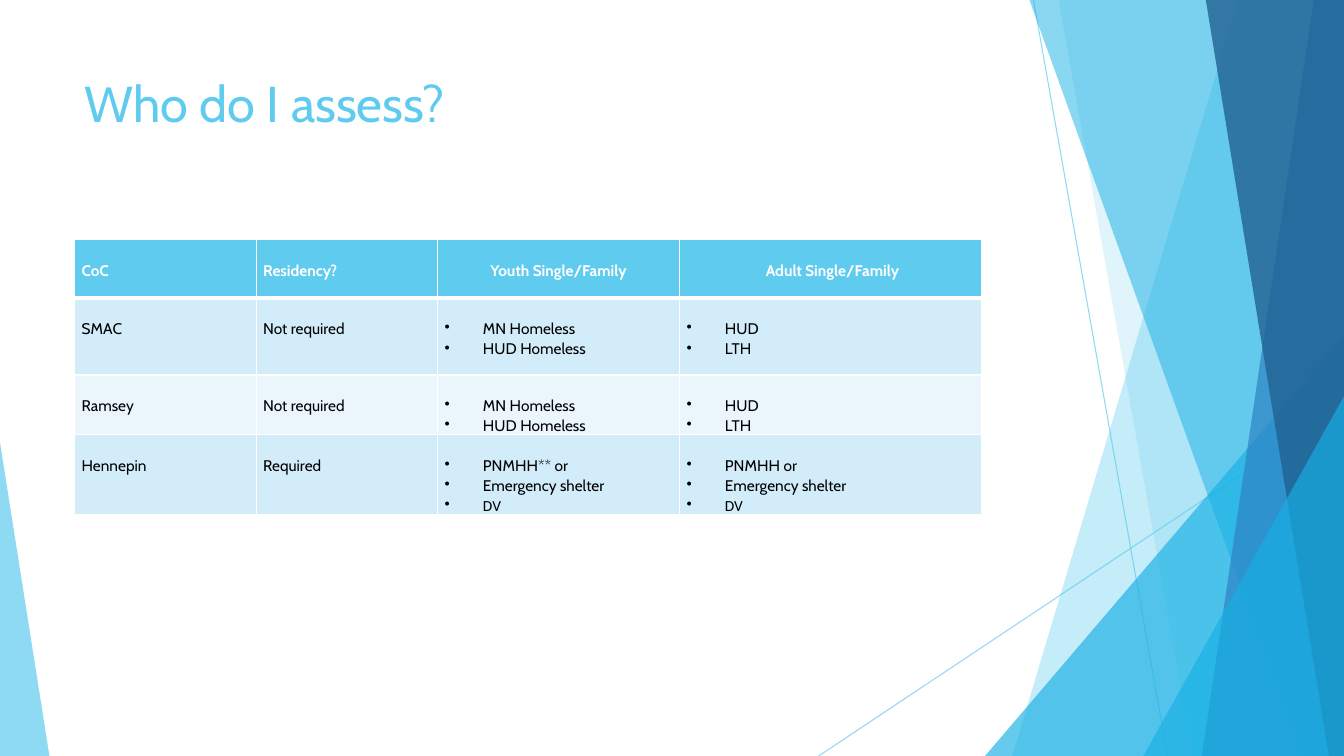
"""Build the "Who do I assess?" slide with its faceted backdrop and table."""
from dataclasses import dataclass

from lxml import etree
from pptx import Presentation
from pptx.dml.color import RGBColor
from pptx.enum.shapes import MSO_CONNECTOR, MSO_SHAPE
from pptx.enum.text import MSO_ANCHOR, PP_ALIGN
from pptx.oxml.ns import qn
from pptx.util import Inches, Pt

STRAIGHT = MSO_CONNECTOR.STRAIGHT
TRIANGLE = MSO_SHAPE.ISOSCELES_TRIANGLE
TOP, LEFT, CENTER = MSO_ANCHOR.TOP, PP_ALIGN.LEFT, PP_ALIGN.CENTER
WIDTH, HEIGHT = 13.33, 7.5


@dataclass(frozen=True)
class Theme:
    """Colours, fonts and type sizes of the slide."""
    sky: str = "5FCBEF"
    cyan: str = "17B0E4"
    blue: str = "2E83C3"
    navy: str = "226292"
    white: str = "FFFFFF"
    black: str = "000000"
    band_dark: str = "D2ECF9"
    band_light: str = "EAF6FC"
    font: str = "Cabin"
    alternate_font: str = "Calibri"
    title_size: float = 36
    table_size: float = 11


THEME = Theme()


@dataclass(frozen=True)
class Ray:
    """A thin line across the backdrop."""
    start: tuple[float, float]
    end: tuple[float, float]


@dataclass(frozen=True)
class Panel:
    """A full-height facet reaching the right edge of the slide."""
    top_left: float
    bottom_left: float
    color: str
    opacity: int


@dataclass(frozen=True)
class Corner:
    """A right triangle standing on the bottom edge of the slide."""
    left: float
    width: float
    height: float
    apex: float
    color: str
    opacity: int


@dataclass(frozen=True)
class Row:
    """A table row; each cell is a tuple of lines."""
    height: float
    fill: str
    cells: tuple[tuple[str, ...], ...]


RAYS = (
    Ray((10.25, 0), (11.58, HEIGHT)),
    Ray((WIDTH, 4.03), (8.12, HEIGHT)),
)
FACETS = (
    Panel(12.28, 10.04, THEME.sky, 36),
    Panel(10.5, 11.83, THEME.sky, 20),
    Corner(9.77, 3.56, 4.17, 1, THEME.cyan, 66),
    Panel(10.21, 12.91, THEME.cyan, 50),
    Panel(13.03, 11.92, THEME.blue, 70),
    Panel(11.96, 13.18, THEME.navy, 80),
    Corner(11.34, 1.99, 3.57, 1, THEME.cyan, 66),
    Corner(0, 0.49, 3.11, 0, THEME.sky, 70),
)
COLUMN_WIDTHS = (1.8, 1.8, 2.4, 3.0)
FIRST_LIST_COLUMN = 2
HOMELESS = ("MN Homeless", "HUD Homeless")
HUD_LTH = ("HUD", "LTH")
ROWS = (
    Row(0.58, THEME.sky, (("CoC",), ("Residency?",), ("Youth Single/Family",),
                          (" Adult Single/Family",))),
    Row(0.76, THEME.band_dark, (("SMAC",), ("Not required",), HOMELESS, HUD_LTH)),
    Row(0.59, THEME.band_light, (("Ramsey",), ("Not required",), HOMELESS, HUD_LTH)),
    Row(0.79, THEME.band_dark, (("Hennepin",), ("Required",),
                                ("PNMHH** or", "Emergency shelter", "DV"),
                                ("PNMHH or", "Emergency shelter", "DV"))),
)


def set_opacity(shape, percent: int) -> None:
    """Make the colours of a shape partly transparent."""
    for color in shape._element.spPr.iter(qn("a:srgbClr")):
        etree.SubElement(color, qn("a:alpha"), val=str(percent * 1000))


def format_runs(paragraph, size: float, color: str, font: str, bold: bool = False) -> None:
    """Apply one font to every run of a paragraph."""
    for run in paragraph.runs:
        run.font.name = font
        run.font.size = Pt(size)
        run.font.bold = bold
        run.font.color.rgb = RGBColor.from_string(color)


def draw_ray(slide, ray: Ray) -> None:
    """Draw one thin backdrop line."""
    points = [Inches(value) for value in (*ray.start, *ray.end)]
    connector = slide.shapes.add_connector(STRAIGHT, *points)
    connector.line.width = Pt(0.75)
    connector.line.color.rgb = RGBColor.from_string(THEME.sky)
    set_opacity(connector, 70)
    etree.SubElement(connector._element.spPr, qn("a:effectLst"))


def draw_facet(slide, facet: Panel | Corner) -> None:
    """Draw one translucent backdrop facet."""
    if isinstance(facet, Panel):
        builder = slide.shapes.build_freeform(Inches(facet.top_left), 0)
        corners = ((WIDTH, 0), (WIDTH, HEIGHT), (facet.bottom_left, HEIGHT))
        builder.add_line_segments([(Inches(x), Inches(y)) for x, y in corners])
        shape = builder.convert_to_shape()
    else:
        shape = slide.shapes.add_shape(
            TRIANGLE, Inches(facet.left), Inches(HEIGHT - facet.height),
            Inches(facet.width), Inches(facet.height))
        shape.adjustments[0] = facet.apex
    shape.shadow.inherit = False
    shape.fill.solid()
    shape.fill.fore_color.rgb = RGBColor.from_string(facet.color)
    shape.line.fill.background()
    set_opacity(shape, facet.opacity)


def draw_title(slide) -> None:
    """Write the slide title."""
    box = slide.shapes.add_textbox(Inches(0.74), Inches(0.67), Inches(9.4), Inches(1.44))
    box.text_frame.word_wrap = True
    box.text_frame.text = "Who do I assess?"
    format_runs(box.text_frame.paragraphs[0], THEME.title_size, THEME.sky, THEME.font)


def set_borders(cell, row_index: int) -> None:
    """Give a cell white borders, thicker under the header."""
    properties = cell._tc.get_or_add_tcPr()
    heavy_side = {0: "lnB", 1: "lnT"}.get(row_index)
    for side in ("lnL", "lnR", "lnT", "lnB"):
        width = Pt(3 if side == heavy_side else 1)
        line = etree.SubElement(properties, qn(f"a:{side}"), w=str(width))
        fill = etree.SubElement(line, qn("a:solidFill"))
        etree.SubElement(fill, qn("a:srgbClr"), val=THEME.white)


def add_bullet(paragraph) -> None:
    """Turn a paragraph into a bulleted item with a hanging indent."""
    properties = paragraph._p.get_or_add_pPr()
    properties.set("marL", str(Inches(0.38)))
    properties.set("indent", str(-Inches(0.38)))
    etree.SubElement(properties, qn("a:buChar"), char="•")


def fill_cell(cell, lines: tuple[str, ...], row_index: int, column_index: int) -> None:
    """Write and format the lines of one table cell."""
    is_header = row_index == 0
    is_list = column_index >= FIRST_LIST_COLUMN
    set_borders(cell, row_index)
    cell.fill.solid()
    cell.fill.fore_color.rgb = RGBColor.from_string(ROWS[row_index].fill)
    cell.margin_left = cell.margin_right = Inches(0.07)
    cell.margin_top, cell.margin_bottom = Inches(0.2), 0
    cell.vertical_anchor = TOP
    cell.text_frame.text = "\n".join(lines)
    for paragraph in cell.text_frame.paragraphs:
        paragraph.line_spacing = 1.07
        paragraph.alignment = CENTER if is_header and is_list else LEFT
        if is_list and not is_header:
            add_bullet(paragraph)
        font = THEME.alternate_font if paragraph.text == "DV" else THEME.font
        color = THEME.white if is_header else THEME.black
        format_runs(paragraph, THEME.table_size, color, font, is_header)


def draw_table(slide) -> None:
    """Draw the assessment table."""
    table = slide.shapes.add_table(
        len(ROWS), len(COLUMN_WIDTHS), Inches(0.74), Inches(2.38),
        Inches(sum(COLUMN_WIDTHS)), Inches(sum(row.height for row in ROWS))).table
    for column, width in zip(table.columns, COLUMN_WIDTHS):
        column.width = Inches(width)
    for row_index, row in enumerate(ROWS):
        table.rows[row_index].height = Inches(row.height)
        for column_index, lines in enumerate(row.cells):
            fill_cell(table.cell(row_index, column_index), lines, row_index, column_index)


def main() -> None:
    """Assemble and save the presentation."""
    presentation = Presentation()
    presentation.slide_width, presentation.slide_height = Inches(WIDTH), Inches(HEIGHT)
    slide = presentation.slides.add_slide(presentation.slide_layouts[6])
    for ray in RAYS:
        draw_ray(slide, ray)
    for facet in FACETS:
        draw_facet(slide, facet)
    draw_title(slide)
    draw_table(slide)
    presentation.save("out.pptx")


if __name__ == "__main__":
    main()
